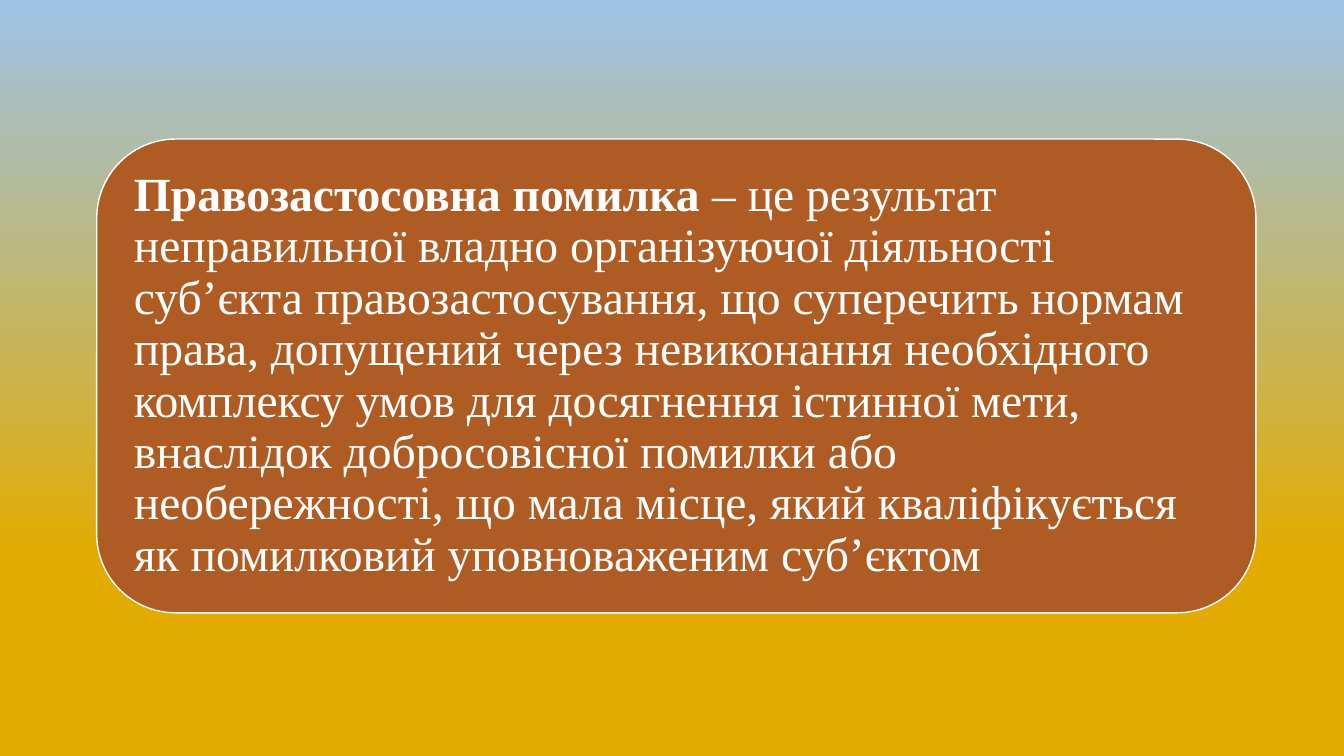
from pptx import Presentation
from pptx.dml.color import RGBColor
from pptx.enum.shapes import MSO_SHAPE
from pptx.enum.text import MSO_ANCHOR, PP_ALIGN
from pptx.util import Pt

ROUNDED = MSO_SHAPE.ROUNDED_RECTANGLE
MIDDLE = MSO_ANCHOR.MIDDLE
LEFT = PP_ALIGN.LEFT

# Content: the term in bold, then its definition
DEFINITION = [
    ("Правозастосовна помилка ", True),
    ("– це результат неправильної владно організуючої діяльності "
     "суб’єкта правозастосування, що суперечить нормам права, допущений "
     "через невиконання необхідного комплексу умов для досягнення істинної "
     "мети, внаслідок добросовісної помилки або необережності, що мала "
     "місце, який кваліфікується як помилковий уповноваженим суб’єктом", False),
]

COLORS = {"gold": "E3AB00", "sky": "9DC3E6", "panel": "AF5C24", "white": "FFFFFF"}
BACKGROUND_STOPS = [(0.26, "gold"), (1, "sky")]
SLIDE_SIZE = (Pt(960), Pt(540))
PANEL_BOX = (Pt(69.12), Pt(99.36), Pt(828), Pt(338.4))
INSET = Pt(10.08)
FRAME_FORMAT = {
    "word_wrap": True, "vertical_anchor": MIDDLE,
    "margin_left": INSET, "margin_right": INSET,
    "margin_top": INSET, "margin_bottom": INSET,
}
PARAGRAPH_FORMAT = {"alignment": LEFT, "line_spacing": 0.9}
FONT_FORMAT = {"name": "Times New Roman", "size": Pt(34)}


def color(name):
    return RGBColor.from_string(COLORS[name])


def apply_format(target, values):
    for attribute, value in values.items():
        setattr(target, attribute, value)


def paint_background(slide):
    fill = slide.background.fill
    fill.gradient()
    fill.gradient_angle = 90
    for stop, (position, name) in zip(fill.gradient_stops, BACKGROUND_STOPS):
        stop.position = position
        stop.color.rgb = color(name)


def add_definition_panel(slide):
    panel = slide.shapes.add_shape(ROUNDED, *PANEL_BOX)
    panel.shadow.inherit = False
    panel.fill.solid()
    panel.fill.fore_color.rgb = color("panel")
    panel.line.color.rgb = color("white")
    panel.line.width = Pt(1)

    # Text
    apply_format(panel.text_frame, FRAME_FORMAT)
    paragraph = panel.text_frame.paragraphs[0]
    apply_format(paragraph, PARAGRAPH_FORMAT)
    for text, bold in DEFINITION:
        run = paragraph.add_run()
        run.text = text
        apply_format(run.font, FONT_FORMAT)
        run.font.bold = bold
        run.font.color.rgb = color("white")


def main():
    presentation = Presentation()
    presentation.slide_width, presentation.slide_height = SLIDE_SIZE
    slide = presentation.slides.add_slide(presentation.slide_layouts[6])
    paint_background(slide)
    add_definition_panel(slide)
    presentation.save("out.pptx")


if __name__ == "__main__":
    main()
